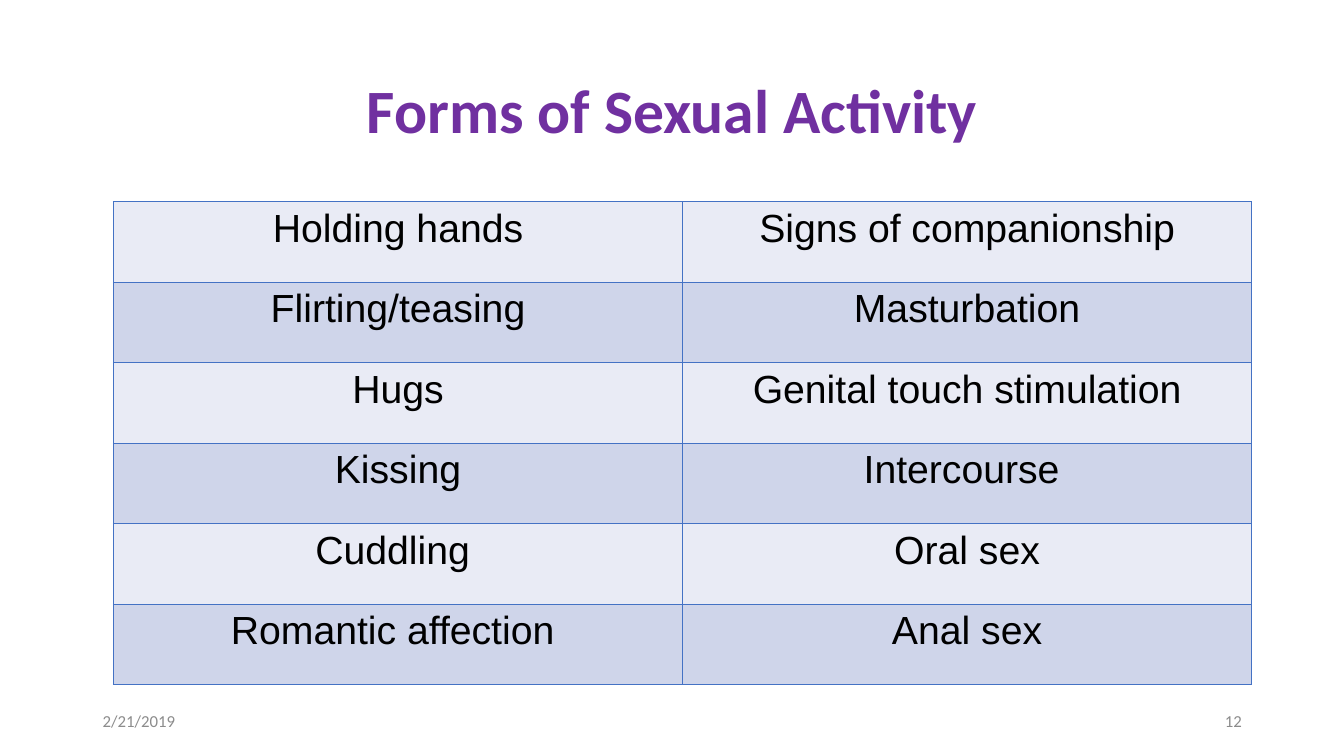
from lxml import etree
from pptx import Presentation
from pptx import util as u
from pptx.dml.color import RGBColor
from pptx.enum import text
from pptx.oxml.ns import qn

COLOURS = {
    "title": "7030A0",
    "text": "000000",
    "footer": "8C8C8C",
    "border": "4472C4",
    "light band": "E9EBF5",
    "dark band": "CFD5EA",
}
ACTIVITIES = [
    ("Holding hands", "Signs of companionship"),
    ("Flirting/teasing", "Masturbation"),
    ("Hugs", "Genital touch stimulation"),
    ("Kissing", "Intercourse "),
    ("Cuddling ", "Oral sex"),
    ("Romantic affection ", "Anal sex"),
]
COLUMN_WIDTH = u.Cm(14.34)
ROW_HEIGHT = u.Cm(2.03)


def write(frame, words, colour, alignment, **font_format):
    """Put one formatted paragraph in a text frame and return it."""
    paragraph = frame.paragraphs[0]
    paragraph.alignment = alignment
    run = paragraph.add_run()
    run.text = words
    run.font.color.rgb = RGBColor.from_string(COLOURS[colour])
    for name, value in font_format.items():
        setattr(run.font, name, value)
    return paragraph


def add_borders(cell):
    properties = cell._tc.get_or_add_tcPr()
    for position, side in enumerate(("lnL", "lnR", "lnT", "lnB")):
        line = etree.Element(qn(f"a:{side}"), w=str(u.Pt(1)))
        fill = etree.SubElement(line, qn("a:solidFill"))
        etree.SubElement(fill, qn("a:srgbClr"), val=COLOURS["border"])
        properties.insert(position, line)


presentation = Presentation()
presentation.slide_width = u.Cm(33.87)
presentation.slide_height = u.Cm(19.05)
slide = presentation.slides.add_slide(presentation.slide_layouts[5])

# Title
title = slide.shapes.title
title_place = {"left": 2.34, "top": 1.02, "width": 29.21, "height": 3.68}
for name, value in title_place.items():
    setattr(title, name, u.Cm(value))
title.text_frame.vertical_anchor = text.MSO_ANCHOR.MIDDLE
title_paragraph = write(title.text_frame, "Forms of Sexual Activity", "title",
                        text.PP_ALIGN.CENTER, name="Calibri", size=u.Pt(44), bold=True)
title_paragraph.line_spacing = 0.9

# Table of activities
row_count, column_count = len(ACTIVITIES), len(ACTIVITIES[0])
table = slide.shapes.add_table(row_count, column_count, u.Cm(2.86), u.Cm(5.08),
                               COLUMN_WIDTH * column_count, ROW_HEIGHT * row_count).table
table.first_row = False
for column in table.columns:
    column.width = COLUMN_WIDTH
for row_index, activities in enumerate(ACTIVITIES):
    table.rows[row_index].height = ROW_HEIGHT
    band = "dark band" if row_index % 2 else "light band"
    for column_index, activity in enumerate(activities):
        cell = table.cell(row_index, column_index)
        cell.fill.solid()
        cell.fill.fore_color.rgb = RGBColor.from_string(COLOURS[band])
        add_borders(cell)
        write(cell.text_frame, activity, "text", text.PP_ALIGN.CENTER,
              name="Arial", size=u.Pt(28))

# Date and slide number
for words, left, alignment in [
    ("12", 23.93, text.PP_ALIGN.RIGHT),
    ("2/21/2019", 2.34, text.PP_ALIGN.LEFT),
]:
    footer = slide.shapes.add_textbox(u.Cm(left), u.Cm(17.65), u.Cm(7.62), u.Cm(1.02))
    footer.text_frame.word_wrap = True
    footer.text_frame.vertical_anchor = text.MSO_ANCHOR.MIDDLE
    write(footer.text_frame, words, "footer", alignment, name="Calibri", size=u.Pt(12))

presentation.save("out.pptx")
